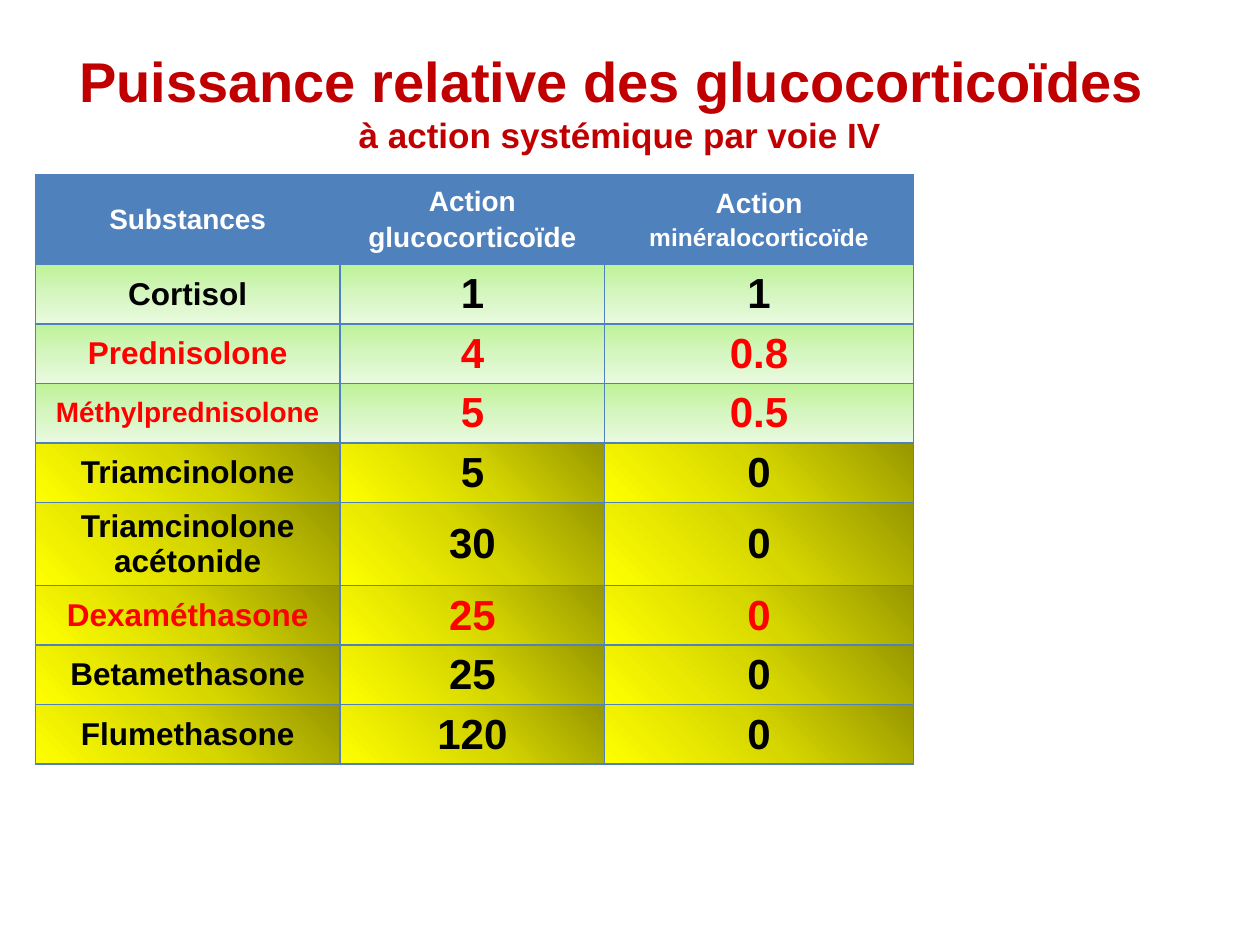
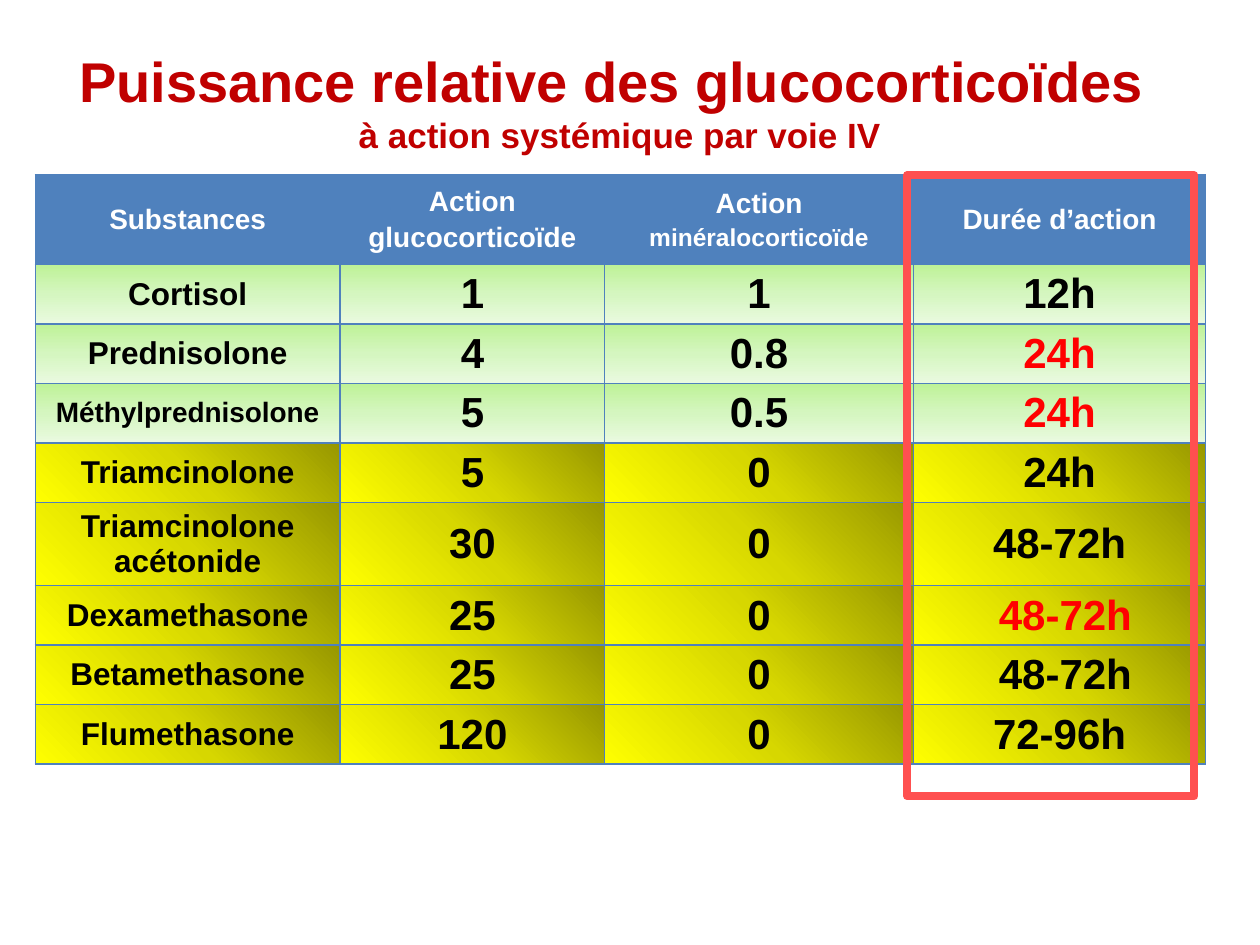
from copy import deepcopy as clone

from pptx import Presentation as Deck
from pptx.dml.color import RGBColor as Rgb
from pptx.enum.shapes import MSO_SHAPE as Shape
from pptx.enum.text import MSO_ANCHOR as Anchor, MSO_AUTO_SIZE as Fit, PP_ALIGN as Align
from pptx.oxml import parse_xml as make
from pptx.oxml.ns import nsdecls, qn
from pptx.util import Inches, Pt

FONT = "Arial"
BLUE, WHITE, BLACK = "4F81BD", "FFFFFF", "000000"
WINE, RED, CORAL = "C00000", "FF0000", "FF5050"
GREEN = (90, ("BEF297", "D5F6C0", "EAFAE0"))
GOLD = (135, ("979700", "D7D700", "FFFF00"))
COLS, ROWS = 100, 75
TOP, TALL = 13.9, 49.3
WIDTHS = (24.2, 21, 24.5, 23.2)
HEAD = ("Substances", "Action\nglucocorticoïde", "Action\nminéralocorticoïde", "Durée d’action")
DRUGS = (
    ("Cortisol", "1", "1", "12h"),
    ("Prednisolone", "4", "0.8", "24h"),
    ("Méthylprednisolone", "5", "0.5", "24h"),
    ("Triamcinolone", "5", "0", "24h"),
    ("Triamcinolone acétonide", "30", "0", "48-72h"),
    ("Dexaméthasone", "25", "0", " 48-72h"),
    ("Betamethasone", "25", "0", " 48-72h"),
    ("Flumethasone", "120", "0", "72-96h"),
)
MARKED = (2, 3, 6)


def hue(code):
    return Rgb.from_string(code)


class Board:
    def __init__(self):
        self.deck = Deck()
        self.deck.slide_width, self.deck.slide_height = Inches(10), Inches(7.5)
        self.slide = None

    def across(self, cols):
        return int(self.deck.slide_width * cols / COLS)

    def down(self, rows):
        return int(self.deck.slide_height * rows / ROWS)

    def box(self, left, top, wide, tall):
        return self.across(left), self.down(top), self.across(wide), self.down(tall)

    def style(self, run, size, code):
        font = run.font
        font.name, font.size, font.bold = FONT, Pt(size), True
        font.color.rgb = hue(code)

    def page(self, main, sub):
        self.slide = self.deck.slides.add_slide(self.deck.slide_layouts[5])
        title = self.slide.shapes.title
        title.left, title.top, title.width, title.height = self.box(4.3, 2.1, 89.8, 11.8)
        frame = title.text_frame
        frame.text = f"{main}\v{sub}"
        frame.auto_size, frame.word_wrap = Fit.NONE, True
        frame.vertical_anchor = Anchor.MIDDLE
        line = frame.paragraphs[0]
        line.alignment = Align.CENTER
        for run, size in zip(line.runs, (32, 20)):
            self.style(run, size, WINE)
        gap = line._p.find(qn("a:br"))
        gap.insert(0, clone(line.runs[0]._r.rPr))

    def edge(self, cell):
        props = cell._tc.get_or_add_tcPr()
        for side in "LRTB":
            props.append(make(
                f'<a:ln{side} {nsdecls("a")} w="{Pt(1)}"><a:solidFill>'
                f'<a:srgbClr val="{BLUE}"/></a:solidFill></a:ln{side}>'))

    def blend(self, cell, angle, codes):
        stops = "".join(
            f'<a:gs pos="{spot * 50000}"><a:srgbClr val="{code}"/></a:gs>'
            for spot, code in enumerate(codes))
        cell._tc.get_or_add_tcPr().append(make(
            f'<a:gradFill {nsdecls("a")} rotWithShape="1"><a:gsLst>{stops}</a:gsLst>'
            f'<a:lin ang="{angle * 60000}" scaled="0"/></a:gradFill>'))

    def label(self, cell, text, size, code):
        cell.text_frame.text = text
        cell.vertical_anchor = Anchor.MIDDLE
        for line in cell.text_frame.paragraphs:
            line.alignment = Align.CENTER
            line._p.get_or_add_pPr().insert(0, make(
                f'<a:spcBef {nsdecls("a")}><a:spcPct val="20000"/></a:spcBef>'))
            long = max(map(len, line.text.split())) > 15
            for run in line.runs:
                self.style(run, size - 2 if long else size, code)

    def table(self, drugs, count, reds):
        data = [HEAD, *drugs]
        wide = sum(WIDTHS[:count])
        frame = self.slide.shapes.add_table(
            len(data), count, *self.box(2.8, TOP, wide, TALL))
        grid = frame.table
        for col, width in zip(grid.columns, WIDTHS):
            col.width = self.across(width)
        for r, words in enumerate(data):
            grid.rows[r].height = self.down({0: 7.1, 5: 6.6}.get(r, 4.5))
            for c, text in enumerate(words[:count]):
                cell = grid.cell(r, c)
                self.edge(cell)
                if r == 0:
                    cell.fill.solid()
                    cell.fill.fore_color.rgb = hue(BLUE)
                    self.label(cell, text, 16, WHITE)
                else:
                    self.blend(cell, *(GREEN if r < 4 else GOLD))
                    code = RED if r in MARKED and c in reds else BLACK
                    self.label(cell, text, 24 if c else 18, code)
        frame.height = self.down(TALL)

    def ring(self, *spot):
        rect = self.slide.shapes.add_shape(Shape.RECTANGLE, *self.box(*spot))
        rect.shadow.inherit = False
        rect.fill.background()
        rect.line.color.rgb = hue(CORAL)
        rect.line.width = Pt(4.5)


def main():
    board = Board()
    title = ("Puissance relative des glucocorticoïdes ", "à action systémique par voie IV")
    board.page(*title)
    board.table(DRUGS, 3, (0, 1, 2))

    board.page(*title)
    plain = [(name.replace("Dexamé", "Dexame"), *rest) for name, *rest in DRUGS]
    board.table(plain, 4, (3,))
    board.ring(72, TOP, 22.8, TALL)
    board.deck.save("out.pptx")


if __name__ == "__main__":
    main()
